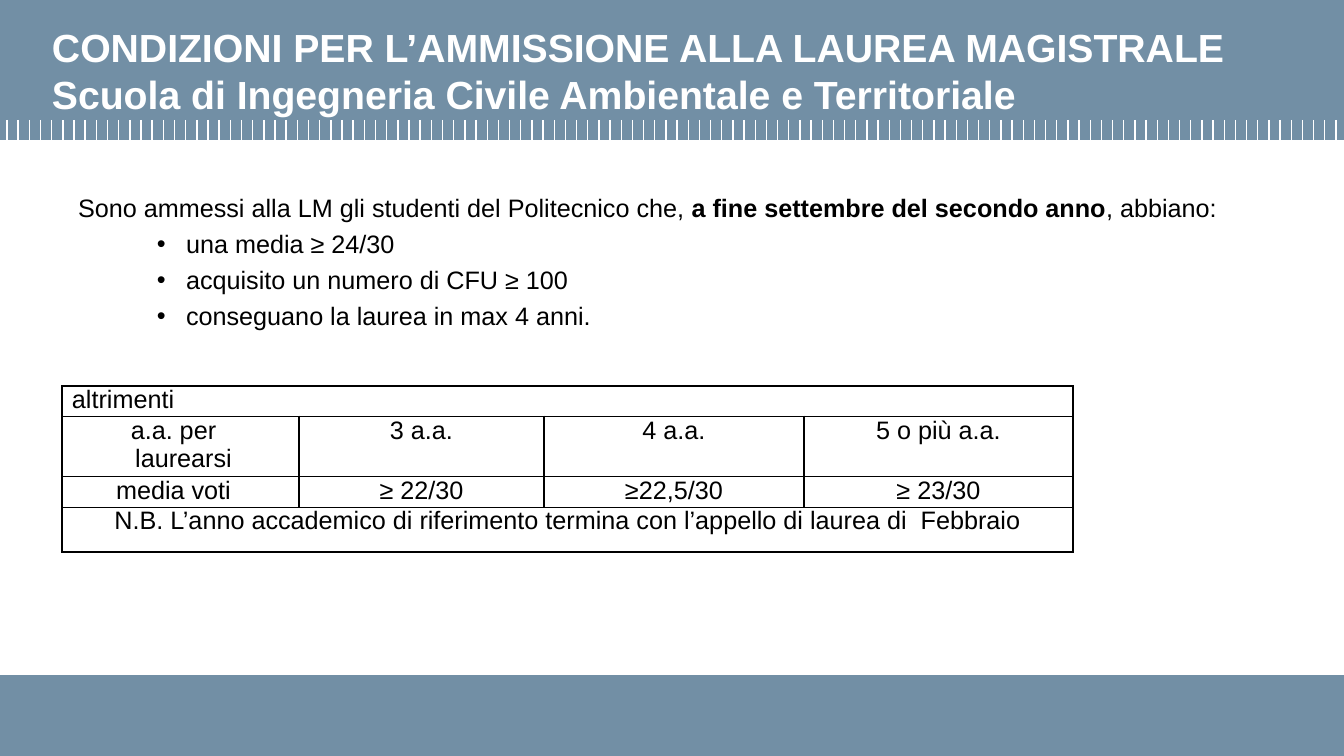
"""Build the slide on admission requirements for the master's degree."""
from dataclasses import dataclass

from lxml import etree
from pptx import Presentation
from pptx import util as u
from pptx.dml.color import RGBColor
from pptx.enum import shapes, text
from pptx.oxml import ns


@dataclass(frozen=True)
class Theme:
    font: str = "Arial"
    band: RGBColor = RGBColor(0x72, 0x8F, 0xA5)
    light: RGBColor = RGBColor(255, 255, 255)
    ink: RGBColor = RGBColor(0, 0, 0)
    title_size: int = 28
    body_size: int = 18
    line_width: int = 1


def px(value):
    return u.Emu(round(value * 914400 / 100.8))


class SlideBuilder:
    def __init__(self, slide, theme):
        self.slide = slide
        self.theme = theme

    def add_run(self, paragraph, words, size, colour, bold=False):
        run = paragraph.add_run()
        run.text = words
        run.font.name = self.theme.font
        run.font.size = u.Pt(size)
        run.font.bold = bold
        run.font.color.rgb = colour

    def body_run(self, paragraph, words, bold=False):
        self.add_run(paragraph, words, self.theme.body_size, self.theme.ink, bold)

    def band(self, top, height):
        band = self.slide.shapes.add_shape(
            shapes.MSO_SHAPE.RECTANGLE, 0, px(top), px(1344), px(height))
        band.shadow.inherit = False
        band.fill.solid()
        band.fill.fore_color.rgb = self.theme.band
        band.line.fill.background()

    def ticks(self, first, last, count, top, bottom):
        for index in range(count):
            x = px(first + (last - first) * index / (count - 1))
            tick = self.slide.shapes.add_connector(
                shapes.MSO_CONNECTOR.STRAIGHT, x, px(top), x, px(bottom))
            tick.line.color.rgb = self.theme.light
            tick.line.width = u.Pt(self.theme.line_width)
            etree.SubElement(tick._element.spPr, ns.qn("a:effectLst"))

    def title(self, lines, left, top, width, height):
        title = self.slide.shapes.title
        self.slide.shapes._spTree.append(title._element)
        title.left, title.top = px(left), px(top)
        title.width, title.height = px(width), px(height)
        frame = title.text_frame
        frame.word_wrap = True
        frame.auto_size = text.MSO_AUTO_SIZE.NONE
        frame.vertical_anchor = text.MSO_ANCHOR.TOP
        frame.margin_left = frame.margin_right = px(10)
        frame.margin_top, frame.margin_bottom = px(8), 0
        heading = frame.paragraphs[0]
        heading.alignment = text.PP_ALIGN.LEFT
        heading.line_spacing = px(47)
        for index, line in enumerate(lines):
            if index:
                heading.add_line_break()
            self.add_run(heading, line, self.theme.title_size, self.theme.light, True)

    def requirements(self, intro, conditions, left, top, width, height):
        box = self.slide.shapes.add_textbox(px(left), px(top), px(width), px(height))
        frame = box.text_frame
        frame.word_wrap = True
        frame.margin_left = frame.margin_right = px(10)
        frame.margin_top = px(42)
        opening = frame.paragraphs[0]
        opening._p.get_or_add_pPr().set("marL", str(px(50)))
        for words, bold in intro:
            self.body_run(opening, words, bold)
        for condition in conditions:
            item = frame.add_paragraph()
            properties = item._p.get_or_add_pPr()
            properties.set("marL", str(px(158)))
            properties.set("indent", str(px(-29)))
            etree.SubElement(properties, ns.qn("a:buFont"), typeface=self.theme.font)
            etree.SubElement(properties, ns.qn("a:buChar"), char="•")
            item.space_before = u.Pt(4.3)
            self.body_run(item, condition)

    def cell_borders(self, cell):
        properties = cell._tc.get_or_add_tcPr()
        for index, side in enumerate(("lnL", "lnR", "lnT", "lnB")):
            border = etree.Element(
                ns.qn(f"a:{side}"), w=str(u.Pt(self.theme.line_width)))
            fill = etree.SubElement(border, ns.qn("a:solidFill"))
            etree.SubElement(fill, ns.qn("a:srgbClr"), val=str(self.theme.ink))
            properties.insert(index, border)

    def table(self, rows, left, top, widths, heights):
        table = self.slide.shapes.add_table(
            len(heights), len(widths), px(left), px(top),
            px(sum(widths)), px(sum(heights))).table
        table.first_row = table.horz_banding = False
        for column, width in zip(table.columns, widths):
            column.width = px(width)
        for row, height in zip(table.rows, heights):
            row.height = px(height)
        for cell in table.iter_cells():
            cell.fill.background()
            cell.margin_left = cell.margin_right = px(10)
            cell.margin_top = cell.margin_bottom = 0
            self.cell_borders(cell)
        for row_index, entries in enumerate(rows):
            if len(entries) == 1:
                table.cell(row_index, 0).merge(table.cell(row_index, len(widths) - 1))
            for column_index, entry in enumerate(entries):
                cell = table.cell(row_index, column_index)
                for index, line in enumerate(entry.split("\n")):
                    frame = cell.text_frame
                    paragraph = frame.add_paragraph() if index else frame.paragraphs[0]
                    if row_index:
                        paragraph.alignment = text.PP_ALIGN.CENTER
                    if index:
                        paragraph._p.get_or_add_pPr().set("marL", str(px(20)))
                    self.body_run(paragraph, line)
        for row_index in (1, 2):
            table.cell(row_index, 0).margin_right = px(24)


def main():
    deck = Presentation()
    deck.slide_width, deck.slide_height = px(1344), px(756)
    builder = SlideBuilder(deck.slides.add_slide(deck.slide_layouts[5]), Theme())
    builder.band(0, 140)
    builder.band(675, 81)
    builder.ticks(first=7, last=1336, count=120, top=120, bottom=140)
    builder.title(
        ["CONDIZIONI PER L’AMMISSIONE ALLA LAUREA MAGISTRALE",
         "Scuola di Ingegneria Civile Ambientale e Territoriale"],
        42, 15, 1261, 93)
    builder.requirements(
        [("Sono ammessi alla LM gli studenti del Politecnico che, ", False),
         ("a fine settembre del secondo anno", True),
         (", abbiano:", False)],
        ["una media ≥ 24/30",
         "acquisito un numero di CFU ≥ 100",
         "conseguano la laurea in max 4 anni."],
        18, 150, 1311, 514)
    builder.table(
        [["altrimenti"],
         ["a.a. per\nlaurearsi", "3 a.a.", "4 a.a.", "5 o più a.a."],
         ["media voti", "≥ 22/30", "≥22,5/30", "≥ 23/30"],
         ["N.B. L’anno accademico di riferimento termina con l’appello di laurea di  Febbraio"]],
        62, 386, widths=[237, 245, 260, 269], heights=[28, 57, 28, 45])
    deck.save("out.pptx")


if __name__ == "__main__":
    main()
